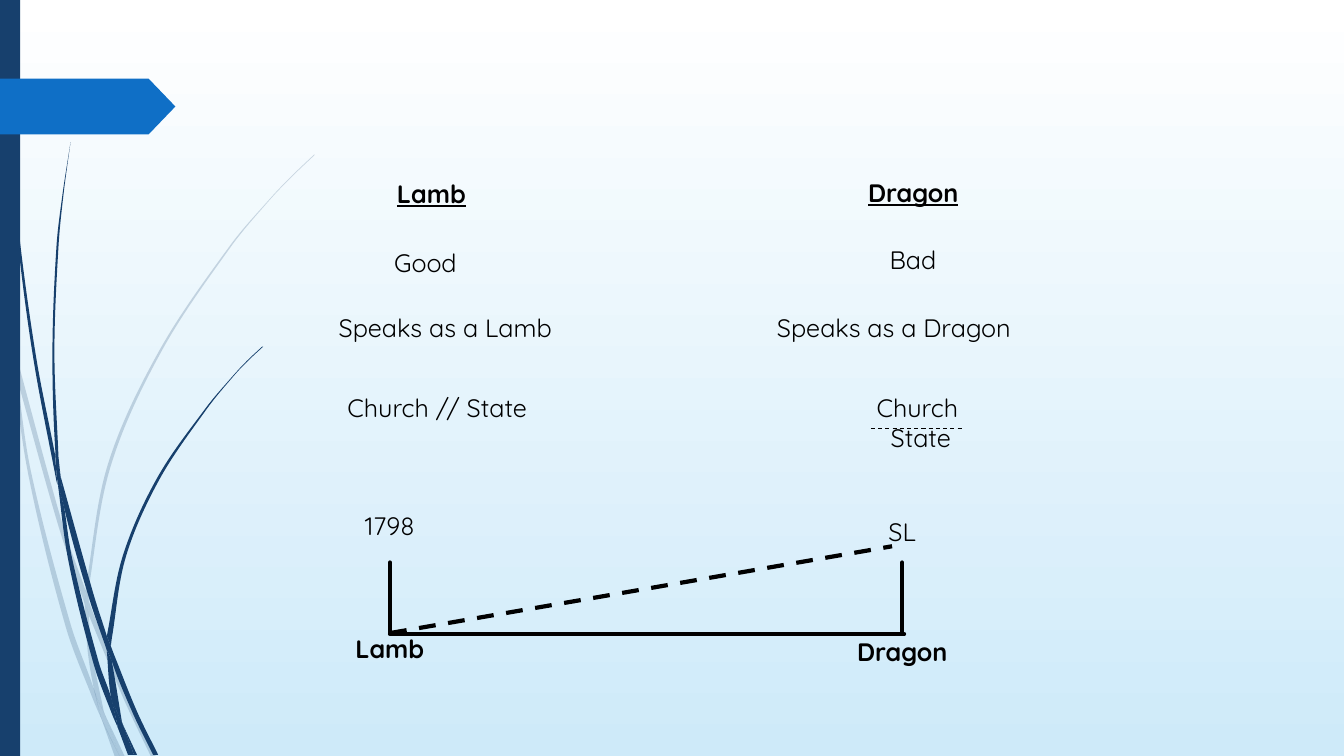
from dataclasses import dataclass
from math import dist

from pptx import Presentation
from pptx.dml.color import RGBColor
from pptx.enum.dml import MSO_LINE
from pptx.enum.shapes import MSO_CONNECTOR, MSO_SHAPE
from pptx.enum.text import PP_ALIGN
from pptx.oxml.ns import qn
from pptx.oxml.xmlchemy import OxmlElement
from pptx.util import Pt

DASH = MSO_LINE.DASH
STRAIGHT = MSO_CONNECTOR.STRAIGHT
RECT, ARROW = MSO_SHAPE.RECTANGLE, MSO_SHAPE.PENTAGON
CENTER = PP_ALIGN.CENTER


@dataclass(frozen=True)
class Theme:
    navy: str = "17406D"
    blue: str = "0F6FC6"
    ink: str = "000000"
    sky: tuple = ("FFFFFF", "CEEAF9")
    font: str = "Quicksand"
    size: float = 18
    thin: float = 0.75
    thick: float = 3
    pale: int = 20


THEME = Theme()
SLIM, HIGH = 89.3, 28.8
GRID = 0.72  # points per unit of the blade outlines

# Each blade is a pair of edges, one running on from the other.
PALE = [
    ([(11, 350), (9, 322), (0, 282)], [(0, 299), (10, 344)]),
    ([(17, 376), (58, 522), (84, 599)], [(85, 586), (62, 520), (14, 345)]),
    ([(88, 610), (123, 694), (150, 751)],
     [(155, 751), (127, 692), (92, 607), (88, 596)]),
    ([(105, 711), (119, 751)], [(124, 751)]),
    ([(11, 350), (28, 470), (65, 621), (92, 693), (101, 714)],
     [(99, 707), (93, 683), (70, 619), (31, 469), (17, 376)]),
    ([(84, 599), (87, 646), (93, 683), (96, 692), (105, 711)],
     [(103, 706), (91, 646), (88, 610), (88, 608)]),
    ([(312, 153), (289, 175), (268, 197), (228, 244), (158, 348),
      (107, 461), (85, 584), (85, 586)],
     [(88, 596), (88, 584), (110, 462), (160, 349), (229, 245),
      (268, 198), (290, 175), (312, 154)]),
    ([(101, 714), (114, 751)], [(119, 751)]),
    ([(85, 586), (84, 599)], [(88, 608), (88, 610), (88, 596)]),
    ([(93, 683), (99, 707), (101, 714), (119, 751)],
     [(105, 711), (96, 692)]),
]
DARK = [
    ([(3, 0), (4, 48), (7, 110), (17, 233), (33, 355), (56, 477), (57, 481)],
     [(55, 457), (55, 453), (36, 355), (19, 232), (8, 109), (5, 48), (4, 0)]),
    ([(60, 472), (64, 505), (88, 592), (106, 645)],
     [(106, 633), (106, 631), (93, 590), (60, 472)]),
    ([(110, 641), (111, 656), (132, 708), (152, 749)],
     [(157, 749), (136, 706), (113, 649)]),
    ([(57, 477), (68, 557), (93, 659), (111, 708), (117, 722)],
     [(116, 717), (110, 691), (98, 657), (72, 556), (64, 505)]),
    ([(70, 141), (62, 193), (56, 245), (52, 349), (55, 449), (60, 472)],
     [(58, 453), (54, 349), (58, 245), (63, 193), (70, 141)]),
    ([(122, 719), (133, 749)], [(136, 749)]),
    ([(55, 449), (55, 453), (57, 477), (64, 505)], [(60, 472)]),
    ([(260, 344), (245, 358), (231, 373), (204, 405), (156, 474),
      (122, 551), (106, 631)],
     [(110, 641), (111, 633), (125, 552), (158, 476), (205, 406),
      (231, 374), (245, 359), (261, 344)]),
    ([(117, 722), (127, 749)], [(131, 749)]),
    ([(106, 645), (110, 691), (116, 706), (122, 719)],
     [(121, 716), (111, 656), (109, 651)]),
    ([(106, 631), (106, 633), (106, 645)],
     [(109, 651), (111, 656), (110, 641)]),
    ([(110, 691), (116, 717), (117, 722), (130, 749)],
     [(133, 749), (122, 719), (116, 706)]),
]

# Text, left, top, width, bold, underlined
LABELS = [
    ("Lamb", 263.5, 123.8, SLIM, True, True),
    ("Dragon", 607.7, 123.1, SLIM, True, True),
    ("Good", 259.2, 172.8, SLIM, False, False),
    ("Speaks as a Lamb", 227.7, 219.6, 180.7, False, False),
    ("Church // State", 227.7, 276.9, 169.2, False, False),
    ("Bad", 607.5, 171, SLIM, False, False),
    ("Speaks as a Dragon", 535.2, 219.6, 206.6, False, False),
    ("Church \nState", 573.1, 276.5, 169.2, False, False),
    ("1798", 233.8, 361, SLIM, False, False),
    ("SL", 599.8, 365, SLIM, False, False),
    ("Lamb", 233.8, 448.6, SLIM, True, False),
    ("Dragon", 599.8, 450.7, SLIM, True, False),
]


def rgb(code):
    return RGBColor.from_string(code)


def paint(shape, color, alpha=None):
    shape.shadow.inherit = False
    shape.fill.solid()
    shape.fill.fore_color.rgb = rgb(color)
    shape.line.fill.background()
    if alpha:
        node = OxmlElement("a:alpha")
        node.set("val", str(alpha * 1000))
        shape._element.spPr.find(".//" + qn("a:srgbClr")).append(node)


def slope(edge, i):
    """Return the unit direction of an edge at its point i."""
    near = edge[max(i - 1, 0):i + 2]
    span = sum(dist(a, b) for a, b in zip(near, near[1:]))
    return [(b - a) / span for a, b in zip(near[0], near[-1])]


def bend(segment, edge, i):
    """Turn the straight segment that ends at point i into a smooth one."""
    reach = dist(edge[i - 1], edge[i]) / 3
    leave = [p + reach * s for p, s in zip(edge[i - 1], slope(edge, i - 1))]
    enter = [p - reach * s for p, s in zip(edge[i], slope(edge, i))]
    cubic = OxmlElement("a:cubicBezTo")
    for x, y in (leave, enter, edge[i]):
        point = OxmlElement("a:pt")
        point.set("x", str(round(x)))
        point.set("y", str(round(y)))
        cubic.append(point)
    segment.getparent().replace(segment, cubic)


def blade(slide, edges, alpha=None):
    edges = [[(Pt(x * GRID), Pt(y * GRID)) for x, y in edge]
             for edge in edges]
    ring = edges[0] + edges[1]
    pen = slide.shapes.build_freeform(*ring[0])
    pen.add_line_segments(ring[1:], close=True)
    shape = pen.convert_to_shape()
    lines = list(shape._element.iter(qn("a:lnTo")))
    first = 0
    for edge in edges:
        local = [(x - shape.left, y - shape.top) for x, y in edge]
        for i in range(1, len(local)):
            bend(lines[first + i - 1], local, i)
        first += len(edge)
    paint(shape, THEME.navy, alpha)


def block(slide, kind, x, y, w, h, color):
    shape = slide.shapes.add_shape(kind, Pt(x), Pt(y), Pt(w), Pt(h))
    paint(shape, color)
    return shape


def label(slide, text, x, y, w, bold, under):
    rows = text.count("\n") + 1
    box = slide.shapes.add_textbox(Pt(x), Pt(y), Pt(w), Pt(HIGH * rows))
    frame = box.text_frame
    frame.word_wrap = True
    frame.text = text
    for para in frame.paragraphs:
        para.alignment = CENTER
        for run in para.runs:
            font = run.font
            font.name, font.size = THEME.font, Pt(THEME.size)
            font.color.rgb = rgb(THEME.ink)
            font.bold, font.underline = bold, under


def rule(slide, x0, y0, x1, y1, width, dash=None):
    link = slide.shapes.add_connector(
        STRAIGHT, Pt(x0), Pt(y0), Pt(x1), Pt(y1))
    link.line.color.rgb = rgb(THEME.ink)
    link.line.width = Pt(width)
    props = link._element.spPr
    if dash:
        link.line.dash_style = dash
    else:
        props.find(qn("a:ln")).set("cap", "rnd")
    props.append(OxmlElement("a:effectLst"))


def backdrop(slide):
    fill = slide.background.fill
    fill.gradient()
    fill.gradient_angle = 270
    for stop, color in zip(fill.gradient_stops, THEME.sky):
        stop.color.rgb = rgb(color)
    for edges in PALE:
        blade(slide, edges, THEME.pale)
    for edges in DARK:
        blade(slide, edges)
    block(slide, RECT, 0, 0, 14.4, 540, THEME.navy)
    tag = block(slide, ARROW, 0, 56.2, 125.3, 39.8, THEME.blue)
    tag.adjustments[0] = 0.48


def main():
    deck = Presentation()
    deck.slide_width, deck.slide_height = Pt(960), Pt(540)
    slide = deck.slides.add_slide(deck.slide_layouts[6])
    backdrop(slide)
    for item in LABELS:
        label(slide, *item)
    rule(slide, 622.1, 306, 689, 306, THEME.thin, DASH)
    rule(slide, 278.6, 452.9, 645.8, 452.9, THEME.thick)
    for x in (278.6, 644.4):
        rule(slide, x, 401.8, x, 452.2, THEME.thick)
    rule(slide, 278.6, 452.2, 637.2, 390.2, THEME.thick, DASH)
    deck.save("out.pptx")


if __name__ == "__main__":
    main()
